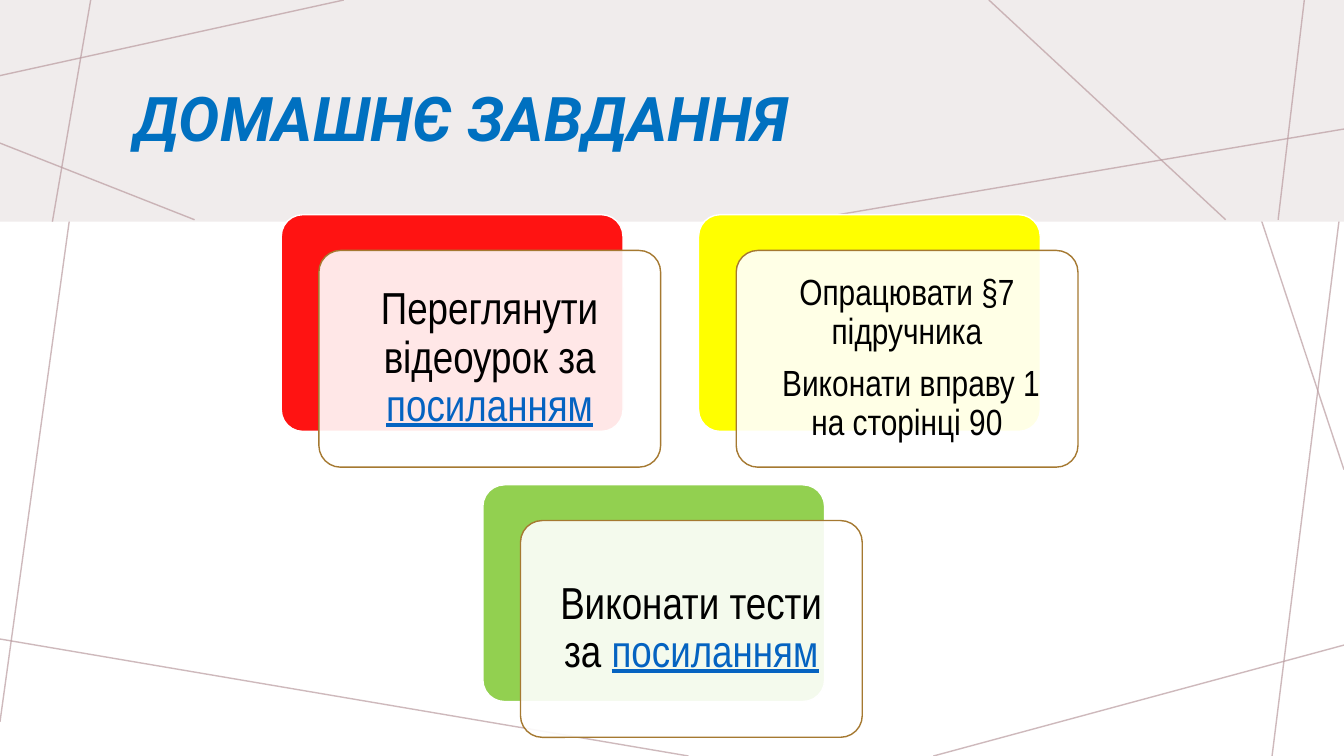
"""Build the homework slide: a title band, crossing lines and three task cards."""
from dataclasses import dataclass

from lxml.etree import SubElement
from pptx import Presentation
from pptx.dml.color import RGBColor
from pptx.enum.shapes import MSO_CONNECTOR as CONN, MSO_SHAPE as SHAPE
from pptx.enum.text import MSO_ANCHOR as ANCHOR, PP_ALIGN as ALIGN
from pptx.oxml.ns import qn
from pptx.util import Emu, Inches, Pt

W, H = Inches(13.333), Inches(7.5)


@dataclass(frozen=True)
class Theme:
    band: str = "F0ECEC"
    line: str = "BA9CA0"
    title: str = "0070C0"
    text: str = "000000"
    link: str = "0563C1"
    white: str = "FFFFFF"
    frame: str = "A57931"
    red: str = "FF1312"
    yellow: str = "FFFF00"
    green: str = "92D050"
    title_font: str = "Roboto"
    card_font: str = "Arial Narrow"
    title_size: int = 44
    large: int = 32
    small: int = 26


@dataclass(frozen=True)
class Line:
    x1: float
    y1: float
    x2: float
    y2: float


@dataclass(frozen=True)
class Run:
    text: str
    link: bool = False


@dataclass(frozen=True)
class Card:
    x: float
    y: float
    fill: str
    size: int
    inset: float
    paragraphs: tuple[tuple[Run, ...], ...]


T = Theme()
BAND_H = 29.33
CARD_W, CARD_H = 25.43, 28.67
SHIFT_X, SHIFT_Y = 2.8, 4.73

BACK_LINES = (
    Line(7.43, 0, 0, 95.47),
    Line(51.23, 100, 0, 84.53),
    Line(100, 85.33, 69.45, 100),
    Line(100, 24, 94.65, 100),
    Line(100, 62.13, 88.43, 0),
)
BAND_LINES = (
    Line(25.58, 0, 0, 10),
    Line(6.75, 0, 3.9, BAND_H),
    Line(14.48, 29.07, 0, 18.93),
    Line(100, 17.07, 60.15, 29.07),
    Line(91.2, 29.07, 73.58, 0),
    Line(97.05, 0, 95.1, 29.07),
)
CARDS = (
    Card(20.93, 28.4, T.red, T.large, 0.13,
         ((Run("Переглянути відеоурок за "), Run("посиланням", True)),)),
    Card(51.98, 28.4, T.yellow, T.small, 0.11,
         ((Run("Опрацювати §7 підручника"),),
          (Run(" Виконати вправу 1 на сторінці 90"),))),
    Card(35.93, 64.13, T.green, T.large, 0.13,
         ((Run("Виконати тести за "), Run("посиланням", True)),)),
)


def px(share: float) -> Emu:
    """Turn a percentage of the slide's width into a length."""
    return Emu(round(W * share / 100))


def py(share: float) -> Emu:
    """Turn a percentage of the slide's height into a length."""
    return Emu(round(H * share / 100))


def rgb(colour: str) -> RGBColor:
    """Turn a hex string into a colour."""
    return RGBColor.from_string(colour)


def set_alpha(fill_owner, percent: int) -> None:
    """Set the opacity of the first solid fill under an element."""
    clr = next(fill_owner.iter(qn("a:srgbClr")))
    SubElement(clr, qn("a:alpha")).set("val", str(percent * 1000))


def add_line(s, line: Line) -> None:
    """Draw one translucent decorative line."""
    c = s.shapes.add_connector(CONN.STRAIGHT, px(line.x1), py(line.y1),
                               px(line.x2), py(line.y2))
    c.line.color.rgb = rgb(T.line)
    c.line.width = Pt(1)
    sp_pr = c._element.spPr
    set_alpha(sp_pr, 70)
    SubElement(sp_pr, qn("a:effectLst"))


def add_box(s, kind: SHAPE, x: float, y: float, w: float, h: float,
            fill: str, line: str = ""):
    """Draw a filled shape, outlined if a line colour is given."""
    sp = s.shapes.add_shape(kind, px(x), py(y), px(w), py(h))
    sp.shadow.inherit = False
    sp.fill.solid()
    sp.fill.fore_color.rgb = rgb(fill)
    if line:
        sp.line.color.rgb = rgb(line)
        sp.line.width = Pt(1)
    else:
        sp.line.fill.background()
    return sp


def add_run(p, text: str, font: str, size: int, colour: str):
    """Add one formatted run to a paragraph."""
    r = p.add_run()
    r.text = text
    r.font.name = font
    r.font.size = Pt(size)
    r.font.color.rgb = rgb(colour)
    return r


def add_title(s, text: str) -> None:
    """Write the slide's title on the band."""
    tf = s.shapes.add_textbox(px(9.3), py(7.2), px(82.58), py(17.87)).text_frame
    tf.word_wrap = True
    tf.vertical_anchor = ANCHOR.MIDDLE
    p = tf.paragraphs[0]
    p.line_spacing = 0.9
    r = add_run(p, text, T.title_font, T.title_size, T.title)
    r.font.bold = r.font.italic = True


def add_card(s, card: Card) -> None:
    """Draw a coloured card with its shifted translucent text panel."""
    back = add_box(s, SHAPE.ROUNDED_RECTANGLE, card.x, card.y,
                   CARD_W, CARD_H, card.fill, T.white)
    panel = add_box(s, SHAPE.ROUNDED_RECTANGLE, card.x + SHIFT_X,
                    card.y + SHIFT_Y, CARD_W, CARD_H, T.white, T.frame)
    back.adjustments[0] = panel.adjustments[0] = 0.1
    set_alpha(panel._element.spPr, 90)
    tf = panel.text_frame
    tf.word_wrap = True
    tf.vertical_anchor = ANCHOR.MIDDLE
    tf.margin_left = tf.margin_right = Inches(card.inset)
    tf.margin_top = tf.margin_bottom = Inches(card.inset)
    for i, runs in enumerate(card.paragraphs):
        p = tf.add_paragraph() if i else tf.paragraphs[0]
        p.alignment = ALIGN.CENTER
        p.line_spacing = 0.9
        p.space_after = Pt(round(card.size * 0.35))
        for run in runs:
            r = add_run(p, run.text, T.card_font, card.size,
                        T.link if run.link else T.text)
            if run.link:
                r.font.underline = True


def main() -> None:
    """Assemble and save the slide."""
    prs = Presentation()
    prs.slide_width, prs.slide_height = W, H
    s = prs.slides.add_slide(prs.slide_layouts[6])
    for line in BACK_LINES:
        add_line(s, line)
    add_box(s, SHAPE.RECTANGLE, 0, 0, 100, BAND_H, T.band)
    for line in BAND_LINES:
        add_line(s, line)
    add_title(s, "ДОМАШНЄ ЗАВДАННЯ")
    for card in CARDS:
        add_card(s, card)
    prs.save("out.pptx")


if __name__ == "__main__":
    main()
